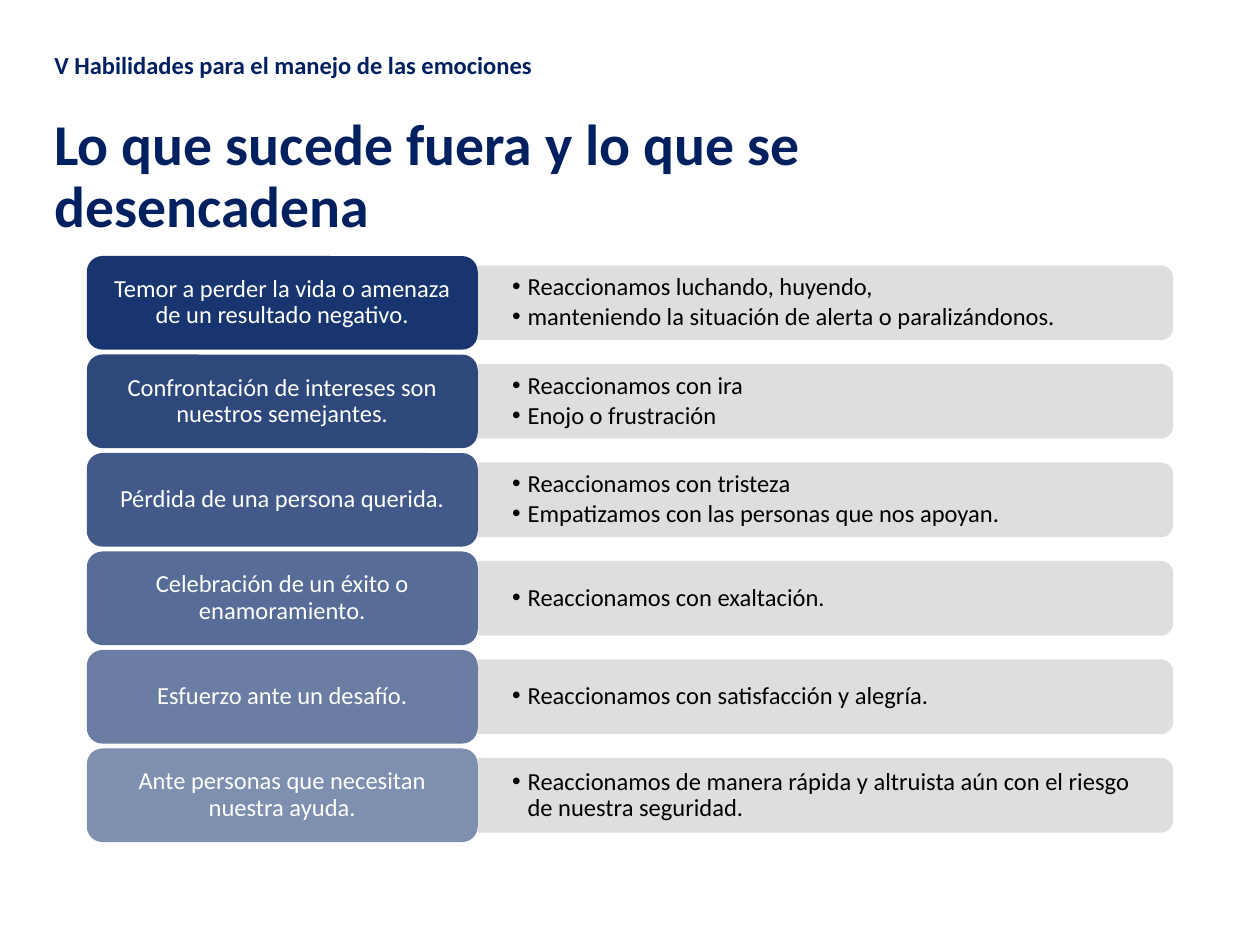
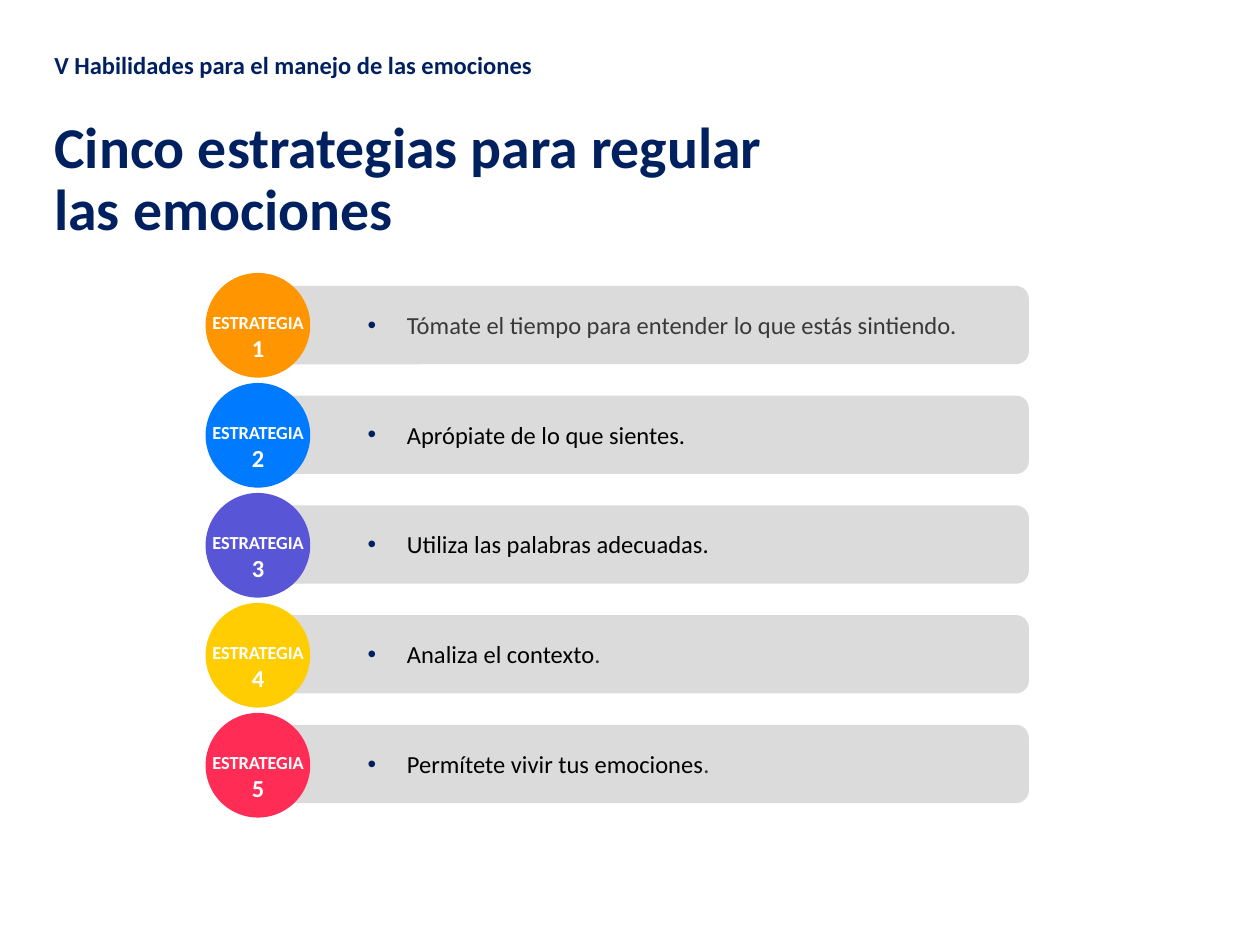
from lxml.etree import SubElement
from pptx import Presentation
from pptx.dml.color import RGBColor
from pptx.enum.shapes import MSO_SHAPE
from pptx.enum.text import MSO_ANCHOR, PP_ALIGN
from pptx.oxml.ns import qn
from pptx.util import Pt

FONT = "Calibri"
NAVY, BAND_GREY, TEXT_GREY = "002060", "DBDBDB", "3B3838"
BLACK, WHITE = "000000", "FFFFFF"
SECTION = "V Habilidades para el manejo de las emociones"

REACTIONS = [
    ("Temor a perder la vida o amenaza de un resultado negativo.",
     ["Reaccionamos luchando, huyendo,",
      "manteniendo la situación de alerta o paralizándonos."]),
    ("Confrontación de intereses son nuestros semejantes.",
     ["Reaccionamos con ira", "Enojo o frustración"]),
    ("Pérdida de una persona querida.",
     ["Reaccionamos con tristeza",
      "Empatizamos con las personas que nos apoyan."]),
    ("Celebración de un éxito o enamoramiento.",
     ["Reaccionamos con exaltación."]),
    ("Esfuerzo ante un desafío.",
     ["Reaccionamos con satisfacción y alegría."]),
    ("Ante personas que necesitan nuestra ayuda.",
     ["Reaccionamos de manera rápida y altruista aún con el riesgo "
      "de nuestra seguridad."]),
]

STRATEGIES = [
    ("FF9500", [("Tómate el tiempo para entender lo que estás sintiendo.", TEXT_GREY)]),
    ("007AFF", [("Aprópiate de lo que sientes.", BLACK)]),
    ("5855D7", [("Utiliza las palabras adecuadas.", BLACK)]),
    ("FFCD01", [("Analiza el contexto", BLACK), (".", TEXT_GREY)]),
    ("FF2C55", [("Permítete vivir tus emociones", BLACK), (".", TEXT_GREY)]),
]


def rgb(code):
    """Turn a hex string into a colour."""
    return RGBColor.from_string(code)


def add_bullet(paragraph, indent, color):
    """Give a paragraph a round bullet with a hanging indent."""
    props = paragraph._p.get_or_add_pPr()
    props.set("marL", str(Pt(indent)))
    props.set("indent", str(-Pt(indent)))
    SubElement(SubElement(props, qn("a:buClr")), qn("a:srgbClr")).set("val", color)
    SubElement(props, qn("a:buFont")).set("typeface", "Arial")
    SubElement(props, qn("a:buChar")).set("char", "•")


def write(frame, text, *, size=14, color=BLACK, bold=False, align=PP_ALIGN.LEFT,
          spacing=1.0, after=0, indent=0, bullet_color=BLACK):
    """Add one paragraph, given as a string or as (text, colour) parts."""
    first = frame.paragraphs[0]
    paragraph = frame.add_paragraph() if first.runs else first
    if indent:
        add_bullet(paragraph, indent, bullet_color)
    paragraph.alignment = align
    paragraph.line_spacing = spacing
    paragraph.space_after = Pt(after)
    for part, part_color in [(text, color)] if isinstance(text, str) else text:
        run = paragraph.add_run()
        run.text = part
        run.font.name = FONT
        run.font.size = Pt(size)
        run.font.bold = bold
        run.font.color.rgb = rgb(part_color)


def set_frame(frame, anchor, inset_x, inset_y):
    """Wrap a text frame and set its anchor and insets."""
    frame.word_wrap = True
    frame.vertical_anchor = anchor
    frame.margin_left = frame.margin_right = Pt(inset_x)
    frame.margin_top = frame.margin_bottom = Pt(inset_y)
    return frame


def add_text_area(slide, left, top, width, height, anchor=MSO_ANCHOR.TOP,
                  inset_x=7.2, inset_y=3.6):
    """Add a text box and return its frame."""
    area = slide.shapes.add_textbox(Pt(left), Pt(top), Pt(width), Pt(height))
    return set_frame(area.text_frame, anchor, inset_x, inset_y)


def add_block(slide, preset, left, top, width, height, color, opacity=100):
    """Add a filled shape without line or shadow."""
    block = slide.shapes.add_shape(preset, Pt(left), Pt(top), Pt(width), Pt(height))
    block.shadow.inherit = False
    block.line.fill.background()
    block.fill.solid()
    block.fill.fore_color.rgb = rgb(color)
    if opacity < 100:
        solid = block._element.spPr.find(qn("a:solidFill"))
        SubElement(solid[0], qn("a:alpha")).set("val", str(opacity * 1000))
    return block


def add_headed_slide(deck, title, title_top, title_width):
    """Add a slide with the section line and its title."""
    slide = deck.slides.add_slide(deck.slide_layouts[6])
    write(add_text_area(slide, 24, 25.2, 396, 24.5), SECTION, color=NAVY, bold=True)
    heading = add_text_area(slide, 24, title_top, title_width, 104.4, MSO_ANCHOR.MIDDLE)
    write(heading, title, size=33, color=NAVY, bold=True, spacing=0.9)
    return slide


def add_reaction_row(slide, index, trigger, reactions):
    """Add a trigger tile and the band of reactions beside it."""
    left, top, width, height = 49.6, 146.3 + 56.28 * index, 223.4, 53.5
    band_left, band_length, band_height = left + width, 397.4, 42.8
    middle = top + height / 2
    band = add_block(slide, MSO_SHAPE.ROUND_2_SAME_RECTANGLE,
                     band_left + (band_length - band_height) / 2,
                     middle - band_length / 2,
                     band_height, band_length, BAND_GREY, 90)
    band.rotation = 90
    answers = add_text_area(slide, band_left, middle - 19.4, 395.3, 38.8,
                            MSO_ANCHOR.MIDDLE, 19.6, 9.8)
    for reaction in reactions:
        write(answers, reaction, spacing=0.9, after=2, indent=8.9)
    tile = add_block(slide, MSO_SHAPE.ROUNDED_RECTANGLE, left, top, width, height,
                     NAVY, 90 - 8 * index)
    cause = set_frame(tile.text_frame, MSO_ANCHOR.MIDDLE, 6.8, 4.8)
    write(cause, trigger, color=WHITE, align=PP_ALIGN.CENTER, spacing=0.9)


def add_strategy_row(slide, index, color, advice):
    """Add a numbered disc and the band with its advice."""
    band_top, disc_top = 163.4 + 62.7 * index, 156 + 62.85 * index
    add_block(slide, MSO_SHAPE.ROUNDED_RECTANGLE, 156, band_top, 432, 44.8, BAND_GREY)
    write(add_text_area(slide, 203, band_top + 10.2, 360, 24.5), advice,
          indent=22.5, bullet_color=NAVY)
    add_block(slide, MSO_SHAPE.OVAL, 117.5, disc_top, 59.8, 59.8, color)
    label = add_text_area(slide, 88.5, disc_top + 18.2, 118, 36.7)
    for text, size in [("ESTRATEGIA", 10.5), (str(index + 1), 14)]:
        write(label, text, size=size, color=WHITE, bold=True, align=PP_ALIGN.CENTER)


def main():
    """Build and save both slides."""
    deck = Presentation()
    deck.slide_width, deck.slide_height = Pt(720), Pt(540)

    outside = add_headed_slide(
        deck, "Lo que sucede fuera y lo que se desencadena", 49.5, 620.6)
    for index, (trigger, reactions) in enumerate(REACTIONS):
        add_reaction_row(outside, index, trigger, reactions)

    regulation = add_headed_slide(
        deck, "Cinco estrategias para regular las emociones", 51.2, 448.6)
    for index, (color, advice) in enumerate(STRATEGIES):
        add_strategy_row(regulation, index, color, advice)

    deck.save("out.pptx")


if __name__ == "__main__":
    main()
